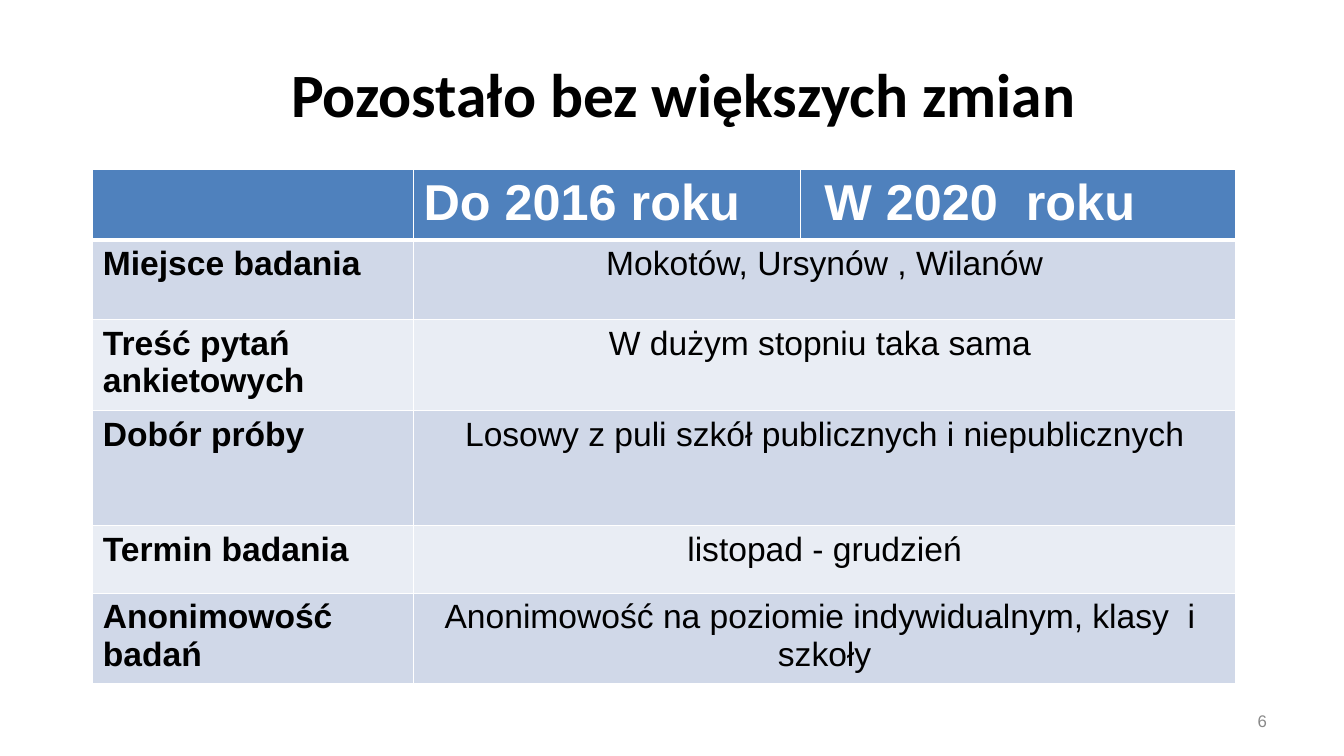
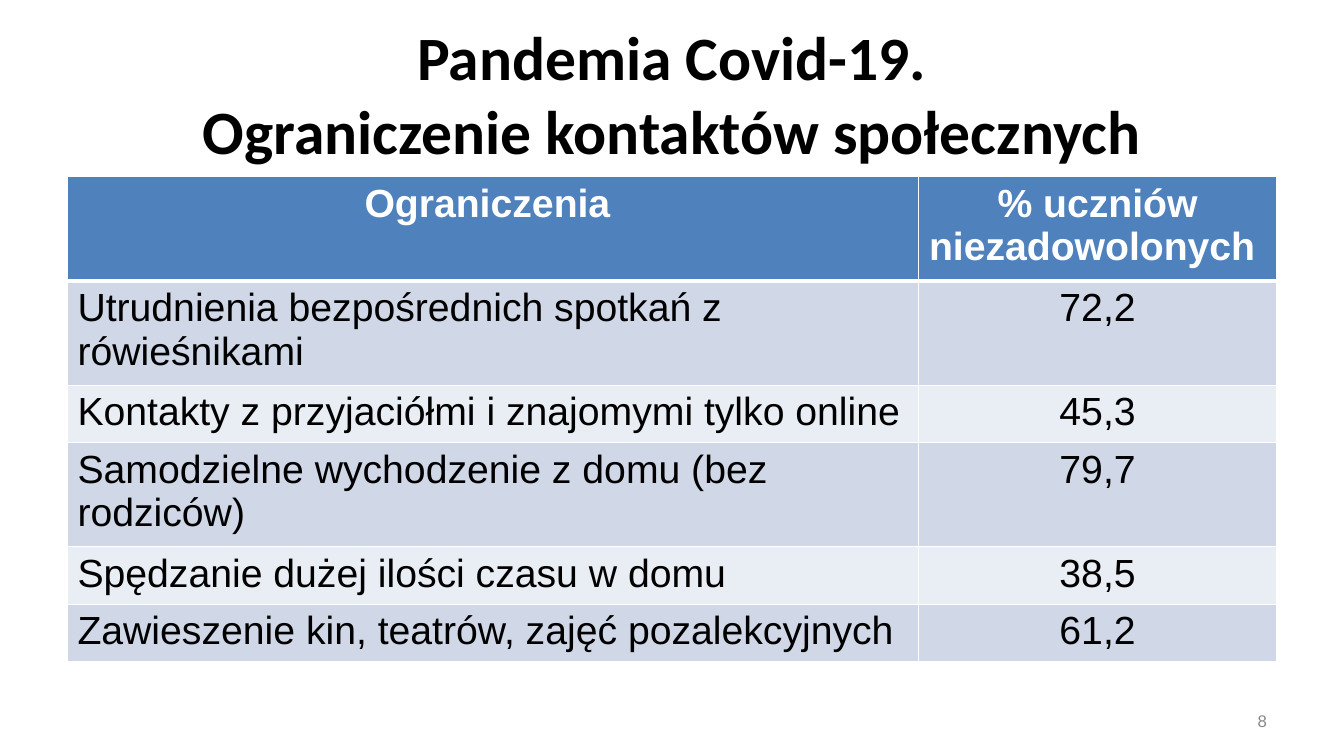
from lxml.etree import SubElement
from pptx import Presentation
from pptx.dml.color import RGBColor
from pptx.enum.text import MSO_ANCHOR, MSO_AUTO_SIZE, PP_ALIGN
from pptx.oxml.ns import qn
from pptx.util import Cm, Pt

WHITE = RGBColor(0xFF, 0xFF, 0xFF)
BLACK = RGBColor(0x00, 0x00, 0x00)
HEADER_BLUE = RGBColor(0x4F, 0x81, 0xBD)
BANDS = (RGBColor(0xD0, 0xD8, 0xE8), RGBColor(0xE9, 0xED, 0xF4))
NUMBER_GREY = RGBColor(0x89, 0x89, 0x89)
TITLE_FONT = "Calibri"
BODY_FONT = "Arial"
TITLE_ONLY = 5

CHANGES = [
    ("", "Do 2016 roku", " W 2020  roku"),
    ("Miejsce badania", "Mokotów, Ursynów , Wilanów"),
    ("Treść pytań ankietowych", "W dużym stopniu taka sama "),
    ("Dobór próby", "Losowy z puli szkół publicznych i niepublicznych"),
    ("Termin badania", "listopad - grudzień"),
    ("Anonimowość badań",
     "Anonimowość na poziomie indywidualnym, klasy  i  szkoły"),
]
RESTRICTIONS = [
    ("Ograniczenia ", "% uczniów niezadowolonych "),
    ("Utrudnienia bezpośrednich spotkań z rówieśnikami", "72,2"),
    ("Kontakty z przyjaciółmi i znajomymi tylko online", "45,3"),
    ("Samodzielne wychodzenie z domu (bez rodziców)", "79,7"),
    ("Spędzanie dużej ilości czasu w domu", "38,5"),
    ("Zawieszenie kin, teatrów, zajęć pozalekcyjnych", "61,2"),
]


def style_text(frame, font_name, size, color, bold, align):
    for paragraph in frame.paragraphs:
        paragraph.alignment = align
        paragraph.font.name = font_name
        paragraph.font.size = Pt(size)
        paragraph.font.color.rgb = color
        paragraph.font.bold = bold


def add_titled_slide(deck, heading, left, width, number):
    slide = deck.slides.add_slide(deck.slide_layouts[TITLE_ONLY])
    title = slide.shapes.title
    title.left, title.top = Cm(left), Cm(0.76)
    title.width, title.height = Cm(width), Cm(3.18)
    title.text_frame.text = heading
    title.text_frame.auto_size = MSO_AUTO_SIZE.NONE
    title.text_frame.vertical_anchor = MSO_ANCHOR.MIDDLE
    style_text(title.text_frame, TITLE_FONT, 44, BLACK, True, PP_ALIGN.CENTER)

    page_number = slide.shapes.add_textbox(
        Cm(24.28), Cm(17.65), Cm(7.9), Cm(1.02)).text_frame
    page_number.word_wrap = True
    page_number.vertical_anchor = MSO_ANCHOR.MIDDLE
    page_number.text = str(number)
    style_text(page_number, BODY_FONT, 12, NUMBER_GREY, False, PP_ALIGN.RIGHT)
    return slide


def set_borders(cell, top, bottom):
    properties = cell._tc.get_or_add_tcPr()
    sides = (("a:lnL", 1), ("a:lnR", 1), ("a:lnT", top), ("a:lnB", bottom))
    for position, (side, points) in enumerate(sides):
        line = properties.makeelement(qn(side), {"w": str(Pt(points))})
        fill = SubElement(line, qn("a:solidFill"))
        SubElement(fill, qn("a:srgbClr"), val=str(WHITE))
        properties.insert(position, line)


def add_banded_table(slide, left, top, widths, heights, rows,
                     header_size, header_align, body_size, bold_labels):
    table = slide.shapes.add_table(
        len(heights), len(widths), Cm(left), Cm(top),
        Cm(sum(widths)), Cm(sum(heights))).table
    for column, width in zip(table.columns, widths):
        column.width = Cm(width)
    for index, (row, height, texts) in enumerate(
            zip(table.rows, heights, rows)):
        row.height = Cm(height)
        header = index == 0
        for cell in row.cells:
            cell.fill.solid()
            cell.fill.fore_color.rgb = (
                HEADER_BLUE if header else BANDS[(index - 1) % 2])
            set_borders(cell, 3 if index == 1 else 1, 3 if header else 1)
        if len(texts) < len(widths):
            table.cell(index, len(texts) - 1).merge(
                table.cell(index, len(widths) - 1))
        for position, text in enumerate(texts):
            frame = table.cell(index, position).text_frame
            frame.text = text
            if header:
                style_text(frame, BODY_FONT, header_size, WHITE, True,
                           header_align)
            else:
                label = position == 0
                style_text(frame, BODY_FONT, body_size, BLACK,
                           label and bold_labels,
                           PP_ALIGN.LEFT if label else PP_ALIGN.CENTER)


def main():
    deck = Presentation()
    deck.slide_width, deck.slide_height = Cm(33.87), Cm(19.05)

    changes = add_titled_slide(
        deck, "Pozostało bez większych zmian", 5.51, 23.44, 6)
    add_banded_table(
        changes, 2.34, 4.27, (8.08, 9.75, 10.97),
        (1.78, 2.01, 2.29, 2.9, 1.7, 2.11), CHANGES,
        36, PP_ALIGN.LEFT, 24, True)

    restrictions = add_titled_slide(
        deck, "Pandemia Covid-19.\vOgraniczenie kontaktów społecznych",
        1.7, 30.48, 8)
    add_banded_table(
        restrictions, 1.7, 4.45, (21.44, 9.04),
        (2.62,) + (1.45,) * 5, RESTRICTIONS,
        28, PP_ALIGN.CENTER, 28, False)

    deck.save("out.pptx")


if __name__ == "__main__":
    main()
